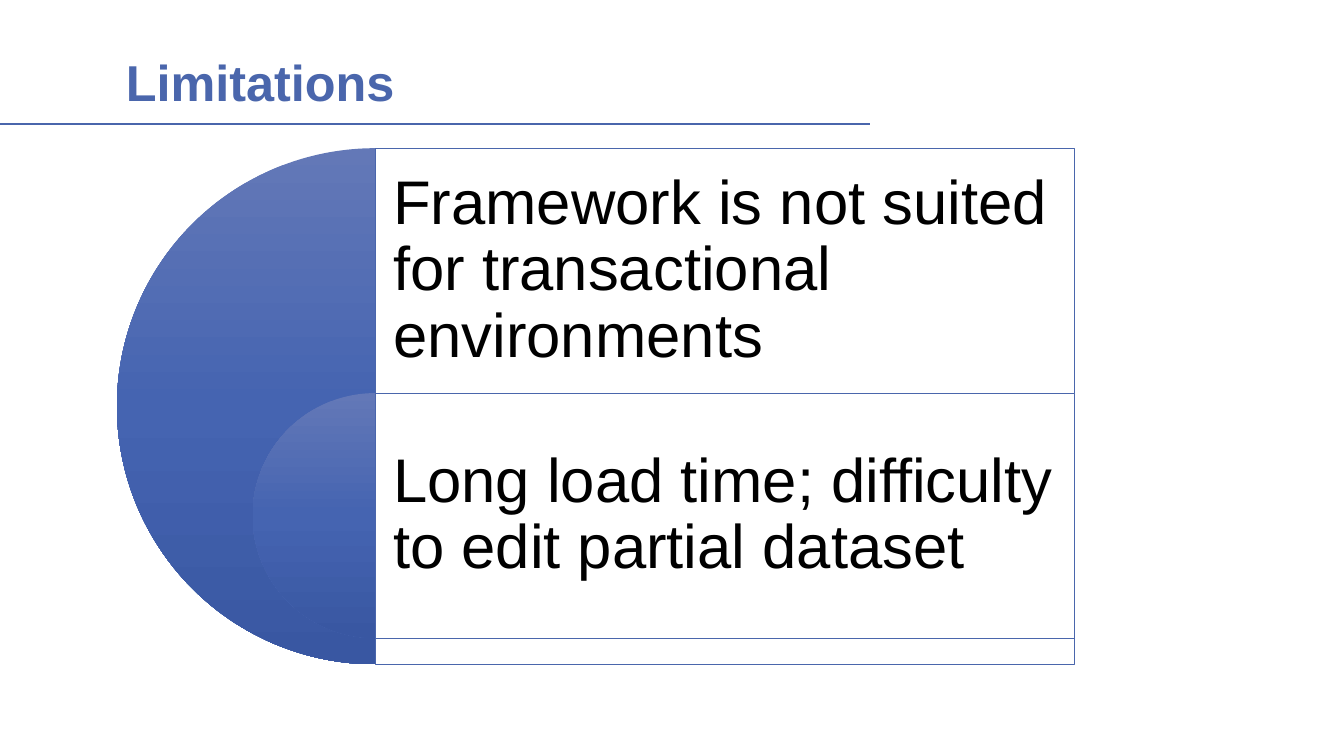
from copy import deepcopy
from dataclasses import dataclass

from lxml import etree
from pptx import Presentation
from pptx.dml.color import RGBColor
from pptx.enum.shapes import MSO_CONNECTOR, MSO_SHAPE
from pptx.enum.text import MSO_ANCHOR, PP_ALIGN
from pptx.oxml.ns import qn
from pptx.util import Inches, Pt

STRAIGHT = MSO_CONNECTOR.STRAIGHT
PIE, RECTANGLE = MSO_SHAPE.PIE, MSO_SHAPE.RECTANGLE
MIDDLE, LEFT = MSO_ANCHOR.MIDDLE, PP_ALIGN.LEFT

PANEL_LEFT, PANEL_WIDTH = 3.72, 6.94
FIRST_TOP, ROW_HEIGHT = 1.47, 2.43
LIMITATIONS = [
    ("Framework is not suited for transactional environments", 5.12),
    ("Long load time; difficulty to edit partial dataset", 2.43),
]


@dataclass(frozen=True)
class Theme:
    font: str = "Arial"
    accent: RGBColor = RGBColor(0x4A, 0x66, 0xAC)
    text: RGBColor = RGBColor(0, 0, 0)
    panel: RGBColor = RGBColor(0xFF, 0xFF, 0xFF)
    gradient: tuple = (
        (0, RGBColor(0x63, 0x78, 0xB7)),
        (0.5, RGBColor(0x45, 0x64, 0xB1)),
        (1, RGBColor(0x39, 0x57, 0xA2)),
    )
    title_size: int = 36
    body_size: int = 44


class SlideBuilder:
    def __init__(self, slide, theme):
        self.shapes = slide.shapes
        self.theme = theme

    def rule(self, left, right, y):
        rule = self.shapes.add_connector(
            STRAIGHT, Inches(left), Inches(y), Inches(right), Inches(y))
        rule.line.color.rgb = self.theme.accent
        rule.line.width = Pt(1.5)
        etree.SubElement(rule.line._get_or_add_ln().getparent(), qn("a:effectLst"))

    def half_disc(self, center_x, top, diameter):
        """Draw the left half of a disc, shaded from top to bottom."""
        disc = self.shapes.add_shape(
            PIE, Inches(center_x - diameter / 2), Inches(top),
            Inches(diameter), Inches(diameter))
        disc.adjustments[0], disc.adjustments[1] = 54, 162
        disc.shadow.inherit = False
        disc.line.fill.background()
        disc.fill.gradient()
        disc.fill.gradient_angle = 270
        stop_list = disc.element.spPr.find(qn("a:gradFill")).find(qn("a:gsLst"))
        stop_list.append(deepcopy(stop_list[0]))
        for stop, (position, color) in zip(disc.fill.gradient_stops, self.theme.gradient):
            stop.position = position
            stop.color.rgb = color

    def panel(self, left, top, width, height):
        """Draw an outlined panel with a 90% opaque fill."""
        panel = self.shapes.add_shape(
            RECTANGLE, Inches(left), Inches(top), Inches(width), Inches(height))
        panel.shadow.inherit = False
        panel.fill.solid()
        panel.fill.fore_color.rgb = self.theme.panel
        color = panel.element.spPr.find(qn("a:solidFill"))[0]
        etree.SubElement(color, qn("a:alpha"), val="90000")
        panel.line.color.rgb = self.theme.accent
        panel.line.width = Pt(0.5)

    def text(self, wording, left, top, width, height, size, color,
             bold=False, insets=(0.1, 0.05), line_spacing=1.0):
        box = self.shapes.add_textbox(
            Inches(left), Inches(top), Inches(width), Inches(height))
        frame = box.text_frame
        frame.word_wrap = True
        frame.vertical_anchor = MIDDLE
        frame.margin_left = frame.margin_right = Inches(insets[0])
        frame.margin_top = frame.margin_bottom = Inches(insets[1])
        paragraph = frame.paragraphs[0]
        paragraph.alignment = LEFT
        paragraph.line_spacing = line_spacing
        run = paragraph.add_run()
        run.text = wording
        run.font.name = self.theme.font
        run.font.size = Pt(size)
        run.font.bold = bold
        run.font.color.rgb = color


def main():
    presentation = Presentation()
    presentation.slide_width = Inches(13.33)
    presentation.slide_height = Inches(7.5)
    slide = presentation.slides.add_slide(presentation.slide_layouts[6])
    theme = Theme()
    builder = SlideBuilder(slide, theme)

    builder.rule(0, 8.63, 1.23)
    for row, (limitation, diameter) in enumerate(LIMITATIONS):
        top = FIRST_TOP + row * ROW_HEIGHT
        builder.half_disc(PANEL_LEFT, top, diameter)
        builder.panel(PANEL_LEFT, top, PANEL_WIDTH, diameter)
        builder.text(limitation, PANEL_LEFT, top, PANEL_WIDTH, ROW_HEIGHT,
                     theme.body_size, theme.text,
                     insets=(0.18, 0.18), line_spacing=0.9)
    builder.text("Limitations", 1.15, 0.44, 9.5, 0.73,
                 theme.title_size, theme.accent, bold=True)

    presentation.save("out.pptx")


if __name__ == "__main__":
    main()
